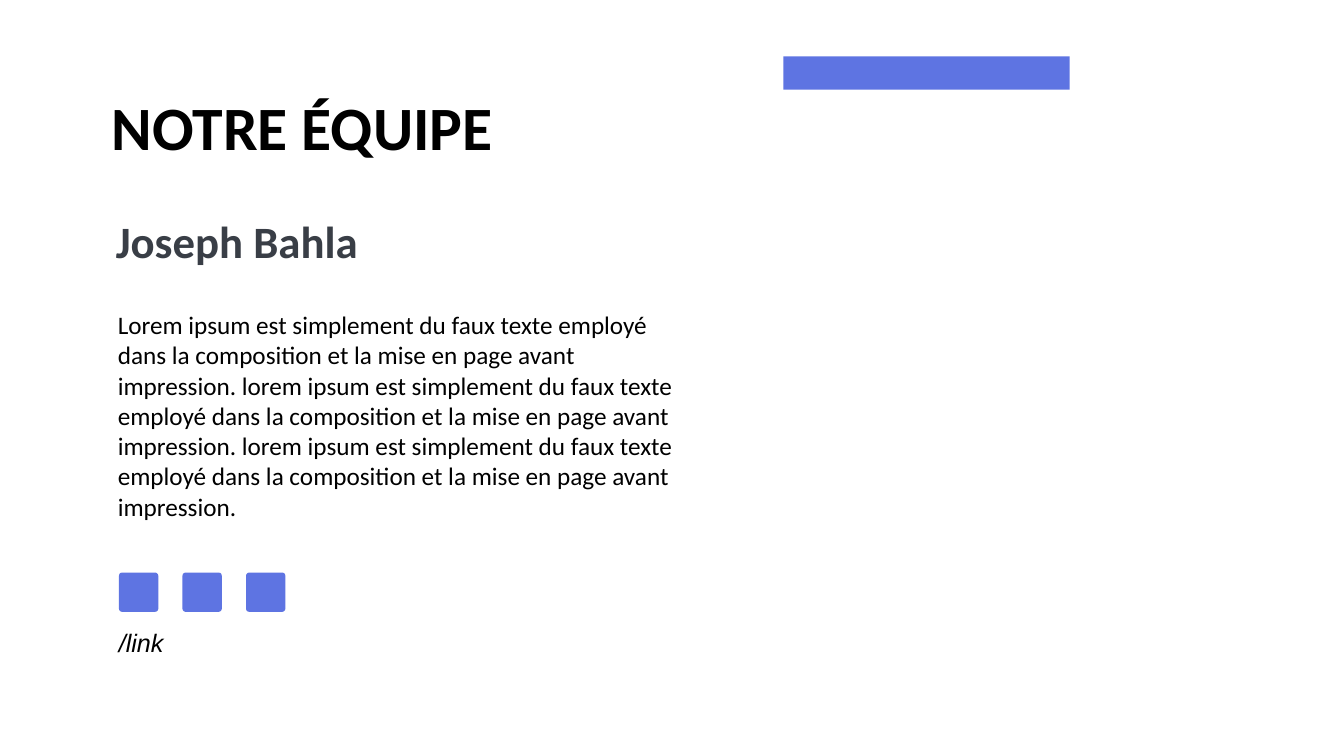
from dataclasses import dataclass

from pptx import Presentation
from pptx.dml.color import RGBColor
from pptx.enum.shapes import MSO_SHAPE
from pptx.enum.text import MSO_ANCHOR, MSO_AUTO_SIZE, PP_ALIGN
from pptx.shapes.autoshape import Shape
from pptx.slide import Slide
from pptx.util import Inches, Pt

COLOURS = {"accent": "5E74E2", "black": "000000", "name": "393E46"}
TITLE_ONLY_LAYOUT = 5
ICON_COUNT, ICON_SIZE, ICON_PITCH = 3, 0.39, 0.63
ICON_LEFT, ICON_TOP = 1.18, 5.68
SENTENCE_END = ("ipsum est simplement du faux texte employé dans la "
                "composition et la mise en page avant impression.")
BIOGRAPHY = " ".join(f"{word} {SENTENCE_END}" for word in ("Lorem", "lorem", "lorem"))


@dataclass
class Box:
    left: float
    top: float
    width: float
    height: float


@dataclass
class Label:
    text: str
    box: Box
    size: int
    colour: str = "black"
    font: str = "Calibri"
    bold: bool = False
    italic: bool = False
    wrap: bool = True


TITLE = Label("NOTRE ÉQUIPE", Box(1.01, 0.83, 4.02, 0.84), 44, bold=True, wrap=False)
LABELS = [
    Label("Joseph Bahla", Box(1.05, 2.07, 2.62, 0.64), 32, "name", bold=True, wrap=False),
    Label(BIOGRAPHY, Box(1.07, 3.02, 5.79, 2.22), 18),
    Label("/link", Box(1.08, 6.17, 2.48, 0.4), 18, font="Arial", italic=True),
]


def place(shape: Shape, box: Box) -> None:
    shape.left, shape.top = Inches(box.left), Inches(box.top)
    shape.width, shape.height = Inches(box.width), Inches(box.height)


def write_label(shape: Shape, label: Label) -> None:
    place(shape, label.box)
    text_frame = shape.text_frame
    text_frame.text = label.text
    text_frame.word_wrap = label.wrap
    text_frame.auto_size = MSO_AUTO_SIZE.SHAPE_TO_FIT_TEXT
    text_frame.vertical_anchor = MSO_ANCHOR.TOP
    paragraph = text_frame.paragraphs[0]
    paragraph.alignment = PP_ALIGN.LEFT
    font = paragraph.runs[0].font
    font.name, font.size = label.font, Pt(label.size)
    font.bold, font.italic = label.bold, label.italic
    font.color.rgb = RGBColor.from_string(COLOURS[label.colour])


def add_accent_shape(slide: Slide, kind: MSO_SHAPE, box: Box) -> Shape:
    shape = slide.shapes.add_shape(kind, 0, 0, 0, 0)
    place(shape, box)
    shape.shadow.inherit = False
    shape.fill.solid()
    shape.fill.fore_color.rgb = RGBColor.from_string(COLOURS["accent"])
    shape.line.fill.background()
    return shape


def main() -> None:
    presentation = Presentation()
    presentation.slide_width, presentation.slide_height = Inches(13.33), Inches(7.5)
    slide = presentation.slides.add_slide(presentation.slide_layouts[TITLE_ONLY_LAYOUT])

    add_accent_shape(slide, MSO_SHAPE.RECTANGLE, Box(7.77, 0.56, 2.84, 0.33))
    for index in range(ICON_COUNT):
        icon_box = Box(ICON_LEFT + index * ICON_PITCH, ICON_TOP, ICON_SIZE, ICON_SIZE)
        icon = add_accent_shape(slide, MSO_SHAPE.ROUNDED_RECTANGLE, icon_box)
        icon.adjustments[0] = 0.08

    write_label(slide.shapes.title, TITLE)
    for label in LABELS:
        write_label(slide.shapes.add_textbox(0, 0, 0, 0), label)

    presentation.save("out.pptx")


if __name__ == "__main__":
    main()
